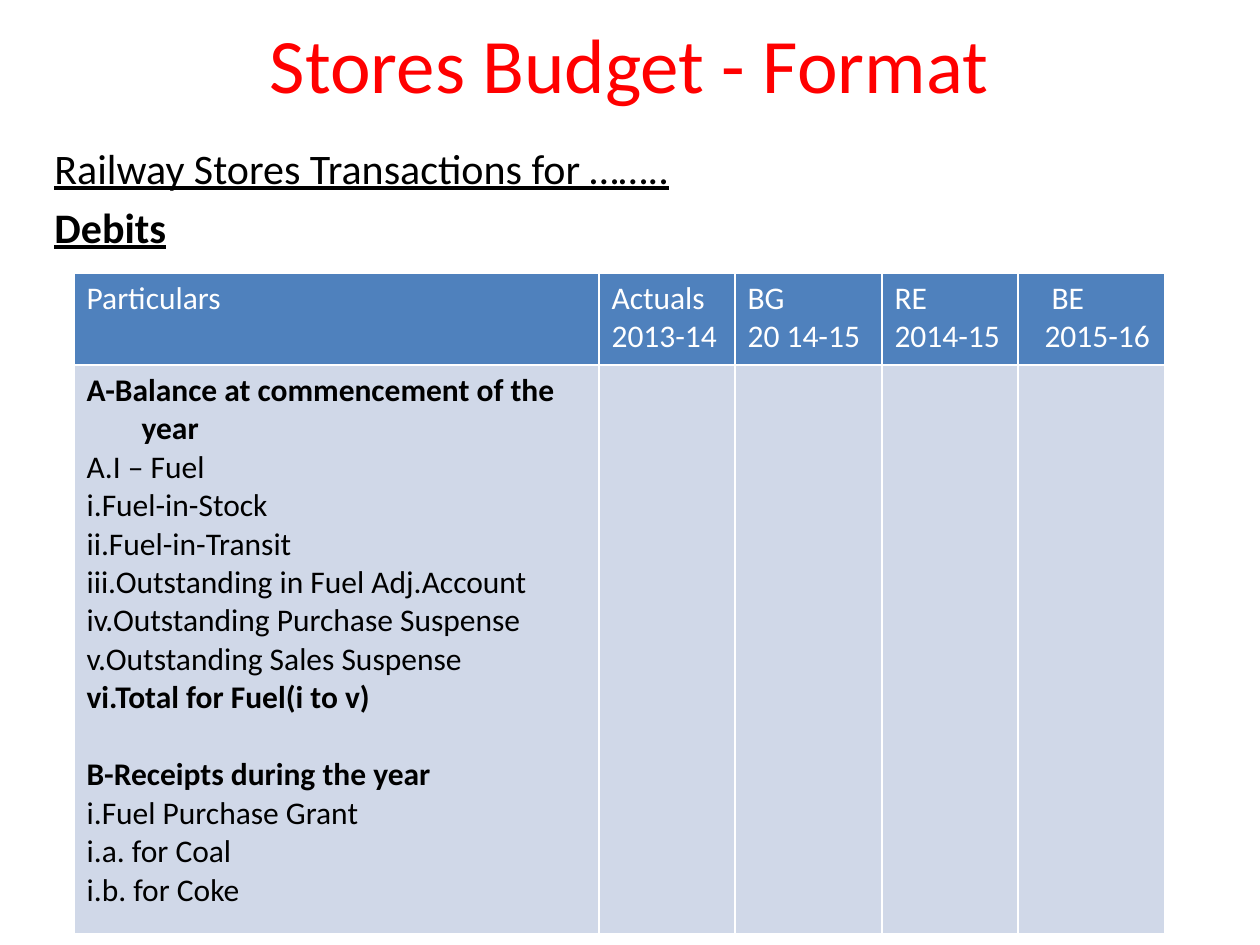
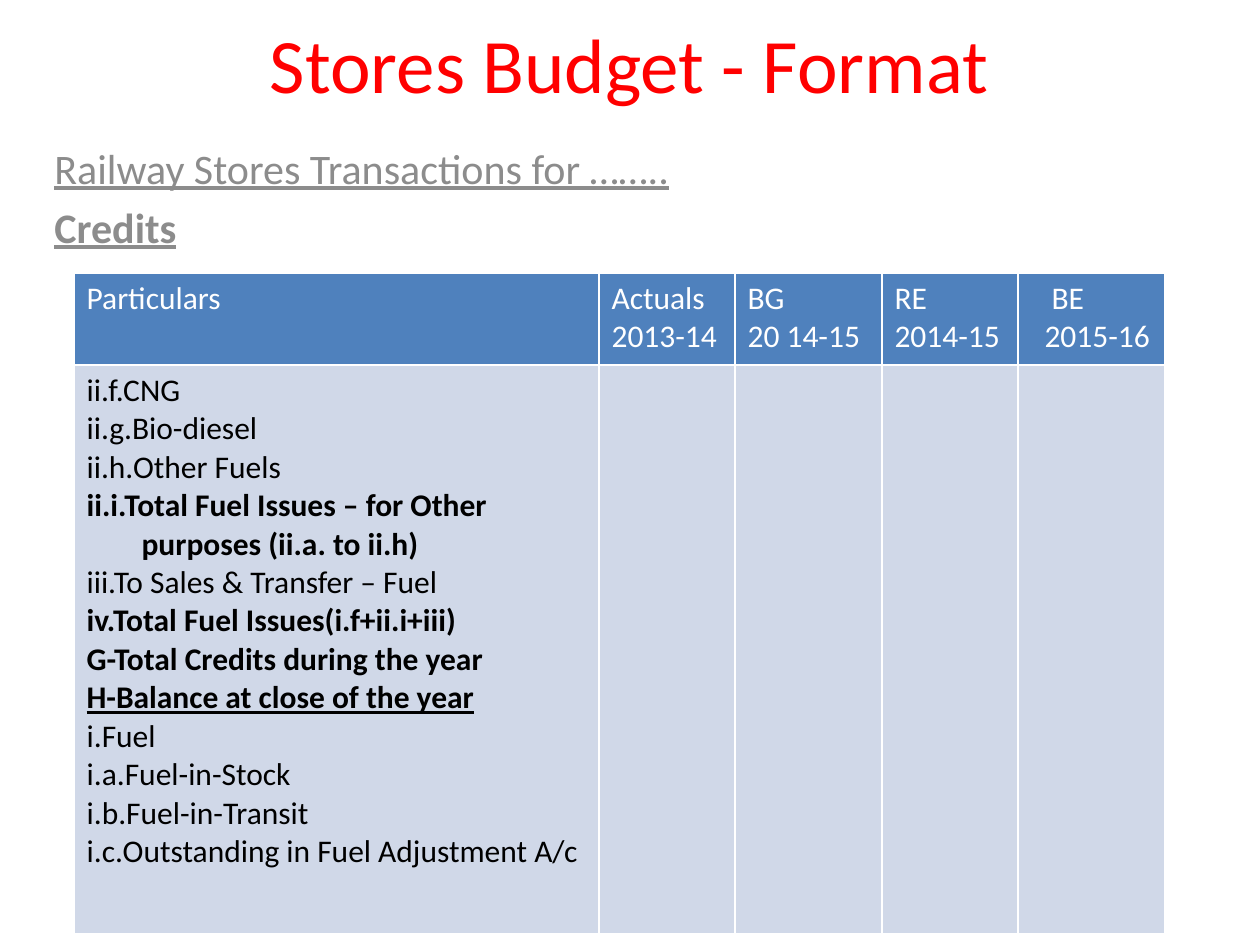
"""Build two stores budget slides, each with a heading and a budget table."""
from lxml.etree import SubElement
from pptx import Presentation
from pptx.dml.color import RGBColor
from pptx.enum.text import MSO_ANCHOR, PP_ALIGN
from pptx.oxml.ns import qn
from pptx.util import Emu, Pt

COLORS = {
    "title": "FF0000",
    "header": "4F81BD",
    "body": "D0D8E8",
    "white": "FFFFFF",
    "black": "000000",
    "gray": "8C8C8C",
}
FONT = "Calibri"
TITLE = "Stores Budget - Format"
SUBTITLE = "Railway Stores Transactions for …….."
HEADERS = [
    ["Particulars"],
    ["Actuals", "2013-14"],
    ["BG", "20 14-15"],
    ["RE", "2014-15"],
    ["BE", "2015-16"],
]
LAST_HEADER_INDENTS = [21, 14]
SLIDES = [
    {
        "section": "Debits",
        "color": "black",
        "items": [
            ("A-Balance at commencement of the year", "bold"),
            ("A.I – Fuel", ""),
            ("i.Fuel-in-Stock", ""),
            ("ii.Fuel-in-Transit", ""),
            ("iii.Outstanding in Fuel Adj.Account", ""),
            ("iv.Outstanding Purchase Suspense", ""),
            ("v.Outstanding Sales Suspense", ""),
            ("vi.Total for Fuel(i to v)", "bold"),
            ("B-Receipts during the year", "bold gap"),
            ("i.Fuel Purchase Grant", ""),
            ("i.a. for Coal", ""),
            ("i.b. for Coke", ""),
        ],
    },
    {
        "section": "Credits",
        "color": "gray",
        "items": [
            ("ii.f.CNG", ""),
            ("ii.g.Bio-diesel", ""),
            ("ii.h.Other Fuels", ""),
            ("ii.i.Total Fuel Issues – for Other purposes (ii.a. to ii.h)", "bold"),
            ("iii.To Sales & Transfer – Fuel", ""),
            ("iv.Total Fuel Issues(i.f+ii.i+iii)", "bold"),
            ("G-Total Credits during the year", "bold"),
            ("H-Balance at close of the year", "bold underline"),
            ("i.Fuel", ""),
            ("i.a.Fuel-in-Stock", ""),
            ("i.b.Fuel-in-Transit", ""),
            ("i.c.Outstanding in Fuel Adjustment A/c", ""),
        ],
    },
]

SLIDE_SIZE = (1260, 945)
TITLE_BOX = (94, 10, 1071, 105)
SUBTITLE_BOX = (42, 136, 1176, 735)
TABLE_PLACE = (74, 273)
COLUMN_WIDTHS = [525, 136, 147, 136, 147]
ROW_HEIGHTS = [92, 569]
HANGING_INDENT = 55


def px(length):
    """Turn pixels into EMU."""
    return Emu(round(length * 914400 / 126))


def write(frame, lines, size, color, styles=None):
    """Fill a text frame with one paragraph per line and return the paragraphs."""
    frame.text = "\n".join(lines)
    for paragraph, style in zip(frame.paragraphs, styles or [""] * len(lines)):
        font = paragraph.font
        font.name, font.size = FONT, Pt(size)
        font.color.rgb = RGBColor.from_string(COLORS[color])
        font.bold = "bold" in style
        font.underline = "underline" in style
        if "gap" in style:
            paragraph.space_before = Pt(22)
    return frame.paragraphs


def indent(paragraph, left, first=0):
    """Set the left margin and first-line indent of a paragraph."""
    properties = paragraph._p.get_or_add_pPr()
    properties.set("marL", str(px(left)))
    properties.set("indent", str(px(first)))


def style_cell(cell, color):
    """Give a cell its fill and thin white borders."""
    properties = cell._tc.get_or_add_tcPr()
    for side in ("lnL", "lnR", "lnT", "lnB"):
        line = SubElement(properties, qn(f"a:{side}"), w=str(Pt(1)))
        fill = SubElement(line, qn("a:solidFill"))
        SubElement(fill, qn("a:srgbClr"), val=COLORS["white"])
    cell.fill.solid()
    cell.fill.fore_color.rgb = RGBColor.from_string(COLORS[color])


def add_title(slide):
    """Place and format the slide title."""
    title = slide.shapes.title
    title.left, title.top, title.width, title.height = map(px, TITLE_BOX)
    title.text_frame.vertical_anchor = MSO_ANCHOR.MIDDLE
    write(title.text_frame, [TITLE], 44, "title")[0].alignment = PP_ALIGN.CENTER


def add_subtitle(slide, section, color):
    """Add the underlined subtitle and section name."""
    frame = slide.shapes.add_textbox(*map(px, SUBTITLE_BOX)).text_frame
    frame.word_wrap = True
    styles = ["underline", "bold underline"]
    for paragraph in write(frame, [SUBTITLE, section], 24, color, styles):
        paragraph.alignment = PP_ALIGN.JUSTIFY
        paragraph.space_before = Pt(4.8)


def add_budget_table(slide, items):
    """Add the budget table with its header and list of particulars."""
    size = (sum(COLUMN_WIDTHS), sum(ROW_HEIGHTS))
    table = slide.shapes.add_table(
        len(ROW_HEIGHTS), len(COLUMN_WIDTHS), *map(px, TABLE_PLACE + size)
    ).table
    for column, width in zip(table.columns, COLUMN_WIDTHS):
        column.width = px(width)
    for row, height, color in zip(table.rows, ROW_HEIGHTS, ("header", "body")):
        row.height = px(height)
        for cell in row.cells:
            style_cell(cell, color)
    for cell, lines in zip(table.rows[0].cells, HEADERS):
        paragraphs = write(cell.text_frame, lines, 18, "white")
    for paragraph, left in zip(paragraphs, LAST_HEADER_INDENTS):
        indent(paragraph, left)
    lines, styles = zip(*items)
    for paragraph in write(table.cell(1, 0).text_frame, lines, 18, "black", styles):
        indent(paragraph, HANGING_INDENT, -HANGING_INDENT)


def main():
    """Build and save the presentation."""
    presentation = Presentation()
    presentation.slide_width, presentation.slide_height = map(px, SLIDE_SIZE)
    for content in SLIDES:
        slide = presentation.slides.add_slide(presentation.slide_layouts[5])
        add_title(slide)
        add_subtitle(slide, content["section"], content["color"])
        add_budget_table(slide, content["items"])
    presentation.save("out.pptx")


if __name__ == "__main__":
    main()
